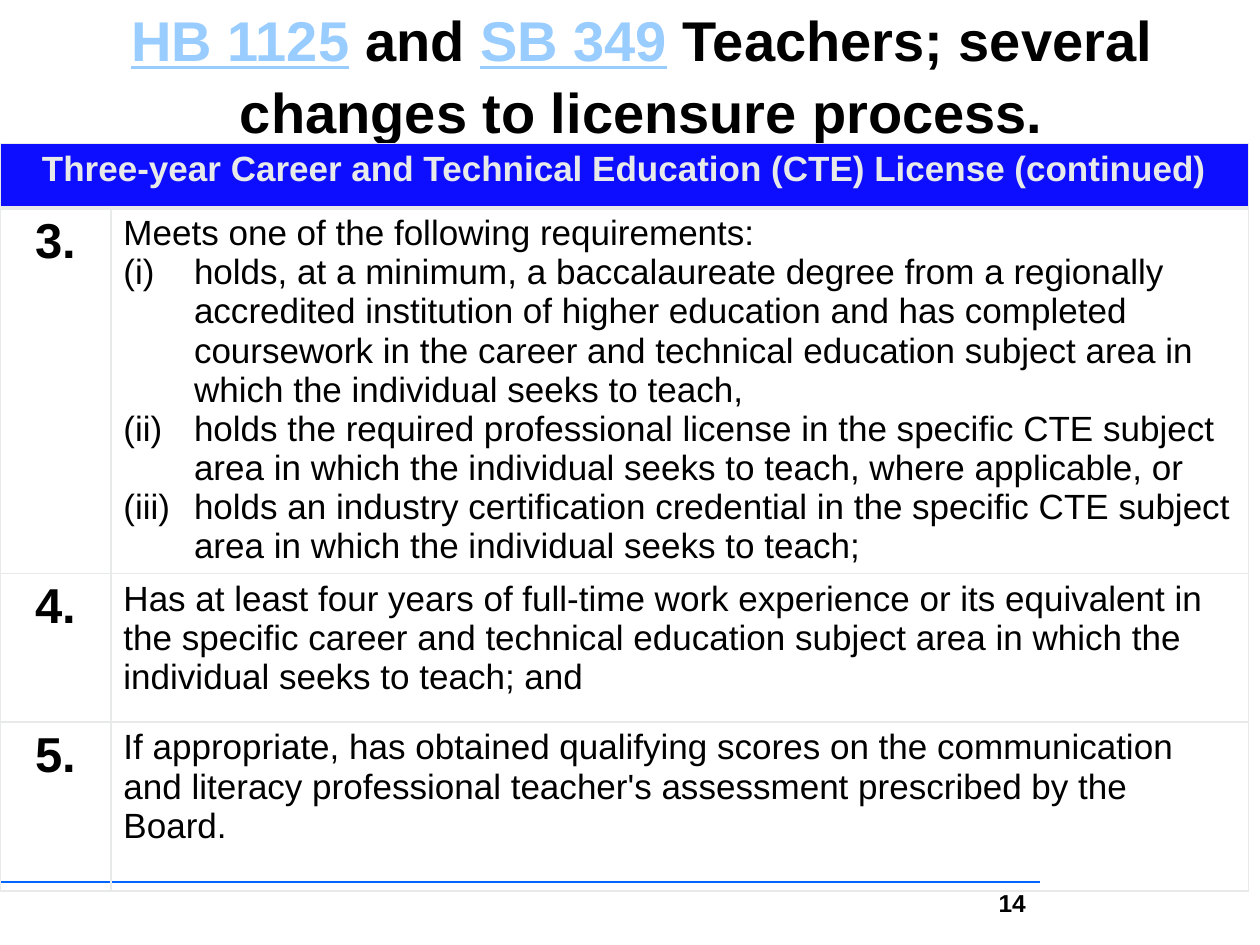
from dataclasses import dataclass

from lxml.etree import SubElement
from pptx import Presentation
from pptx.dml.color import RGBColor
from pptx.enum.shapes import MSO_CONNECTOR as Connector
from pptx.enum.text import MSO_ANCHOR as Anchor, MSO_AUTO_SIZE as AutoSize, PP_ALIGN as Align
from pptx.oxml import parse_xml
from pptx.oxml.ns import nsdecls, qn
from pptx.util import Inches, Pt

TITLE = [  # text, is a bill number
    ("HB 1125", True),
    (" and ", False),
    ("SB 349", True),
    (" Teachers; several changes to licensure process.", False),
]
HEADING = "Three-year Career and Technical Education (CTE) License (continued)"
REQUIREMENTS = [  # number, lead text, numbered options
    ("3.", "Meets one of the following requirements:", [
        "holds, at a minimum, a baccalaureate degree from a regionally accredited "
        "institution of higher education and has completed coursework in the career and "
        "technical education subject area in which the individual seeks to teach,",
        "holds the required professional license in the specific CTE subject area in "
        "which the individual seeks to teach, where applicable, or",
        "holds an industry certification credential in the specific CTE subject area in "
        "which the individual seeks to teach;",
    ]),
    ("4.", "Has at least four years of full-time work experience or its equivalent in the "
           "specific career and technical education subject area in which the individual "
           "seeks to teach; and", []),
    ("5.", "If appropriate, has\u00a0obtained qualifying scores on the communication and literacy "
           "professional teacher's assessment prescribed by the Board.", []),
]
PAGE_NUMBER = "14"

COLUMN_WIDTHS = [0.88, 9.03]
ROW_HEIGHTS = [0.51, 2.9, 1.18, 1.34]


@dataclass(frozen=True)
class Theme:
    font: str = "Arial"
    text: str = "000000"
    bill: str = "99CCFF"
    rule: str = "0066FF"
    heading_fill: str = "0D0DFF"
    pale: str = "E8EAE9"
    title_size: int = 32
    number_size: int = 28
    body_size: int = 20
    page_size: int = 14


THEME = Theme()


def style(font, size, color=THEME.text, bold=False):
    font.name = THEME.font
    font.size = Pt(size)
    font.bold = bold
    font.color.rgb = RGBColor.from_string(color)


def style_runs(para, size, color=THEME.text, bold=False, align=Align.LEFT):
    para.alignment = align
    for span in para.runs:
        style(span.font, size, color, bold)


def number_option(para):
    """Give the paragraph a hanging (i), (ii), (iii) number."""
    props = para._p.get_or_add_pPr()
    props.set("marL", str(Inches(0.56)))
    props.set("indent", str(-Inches(0.56)))
    SubElement(props, qn("a:buFont")).set("typeface", THEME.font)
    SubElement(props, qn("a:buAutoNum")).set("type", "romanLcParenBoth")


def set_borders(cell, widths):
    """Draw the left, right, top and bottom borders, with widths in points."""
    props = cell._tc.get_or_add_tcPr()
    for index, (side, width) in enumerate(zip("LRTB", widths)):
        props.insert(index, parse_xml(
            f'<a:ln{side} {nsdecls("a")} w="{Pt(width)}"><a:solidFill>'
            f'<a:srgbClr val="{THEME.pale}"/></a:solidFill></a:ln{side}>'))


def add_rule(page):
    rule = page.shapes.add_connector(
        Connector.STRAIGHT, Inches(8.25), Inches(7), Inches(0), Inches(7))
    rule.line.color.rgb = RGBColor.from_string(THEME.rule)
    rule.line.width = Pt(1.25)
    SubElement(rule._element.spPr, qn("a:effectLst"))


def fill_title(box):
    box.left, box.top, box.width, box.height = map(Inches, (0, 0, 10.19, 1.15))
    frame = box.text_frame
    frame.auto_size = AutoSize.NONE
    frame.word_wrap = True
    frame.vertical_anchor = Anchor.MIDDLE
    para = frame.paragraphs[0]
    para.alignment = Align.CENTER
    para.line_spacing = 1.07
    for text, is_bill in TITLE:
        span = para.add_run()
        span.text = text
        style(span.font, THEME.title_size, THEME.bill if is_bill else THEME.text, bold=True)
        span.font.underline = is_bill


def add_requirements(page):
    table = page.shapes.add_table(
        len(ROW_HEIGHTS), len(COLUMN_WIDTHS), Inches(0), Inches(1.14),
        Inches(sum(COLUMN_WIDTHS)), Inches(sum(ROW_HEIGHTS))).table
    table.first_row = table.horz_banding = False
    for column, width in zip(table.columns, COLUMN_WIDTHS):
        column.width = Inches(width)
    for row, height in zip(table.rows, ROW_HEIGHTS):
        row.height = Inches(height)

    for index, row in enumerate(table.rows):
        for cell in row.cells:
            if index == 0:
                cell.fill.solid()
                cell.fill.fore_color.rgb = RGBColor.from_string(THEME.heading_fill)
            else:
                cell.fill.background()
            set_borders(cell, (1, 1, 3 if index == 1 else 1, 3 if index == 0 else 1))

    heading = table.cell(0, 0)
    heading.merge(table.cell(0, 1))
    heading.text_frame.text = HEADING
    style_runs(heading.text_frame.paragraphs[0], THEME.body_size, THEME.pale, True, Align.CENTER)

    for index, (number, lead, options) in enumerate(REQUIREMENTS, start=1):
        number_frame = table.cell(index, 0).text_frame
        number_frame.text = number
        style_runs(number_frame.paragraphs[0], THEME.number_size, bold=True, align=Align.CENTER)
        frame = table.cell(index, 1).text_frame
        frame.text = "\n".join([lead, *options])
        for position, para in enumerate(frame.paragraphs):
            if position > 0:
                number_option(para)
            style_runs(para, THEME.body_size)


def add_page_number(page):
    box = page.shapes.add_textbox(*map(Inches, (7.77, 7, 0.47, 0.38)))
    frame = box.text_frame
    frame.word_wrap = True
    frame.text = PAGE_NUMBER
    style_runs(frame.paragraphs[0], THEME.page_size, bold=True, align=Align.RIGHT)


def main():
    deck = Presentation()
    deck.slide_width, deck.slide_height = Inches(10), Inches(7.5)
    page = deck.slides.add_slide(deck.slide_layouts[5])
    add_rule(page)
    fill_title(page.shapes.title)
    add_requirements(page)
    add_page_number(page)
    deck.save("out.pptx")


if __name__ == "__main__":
    main()
